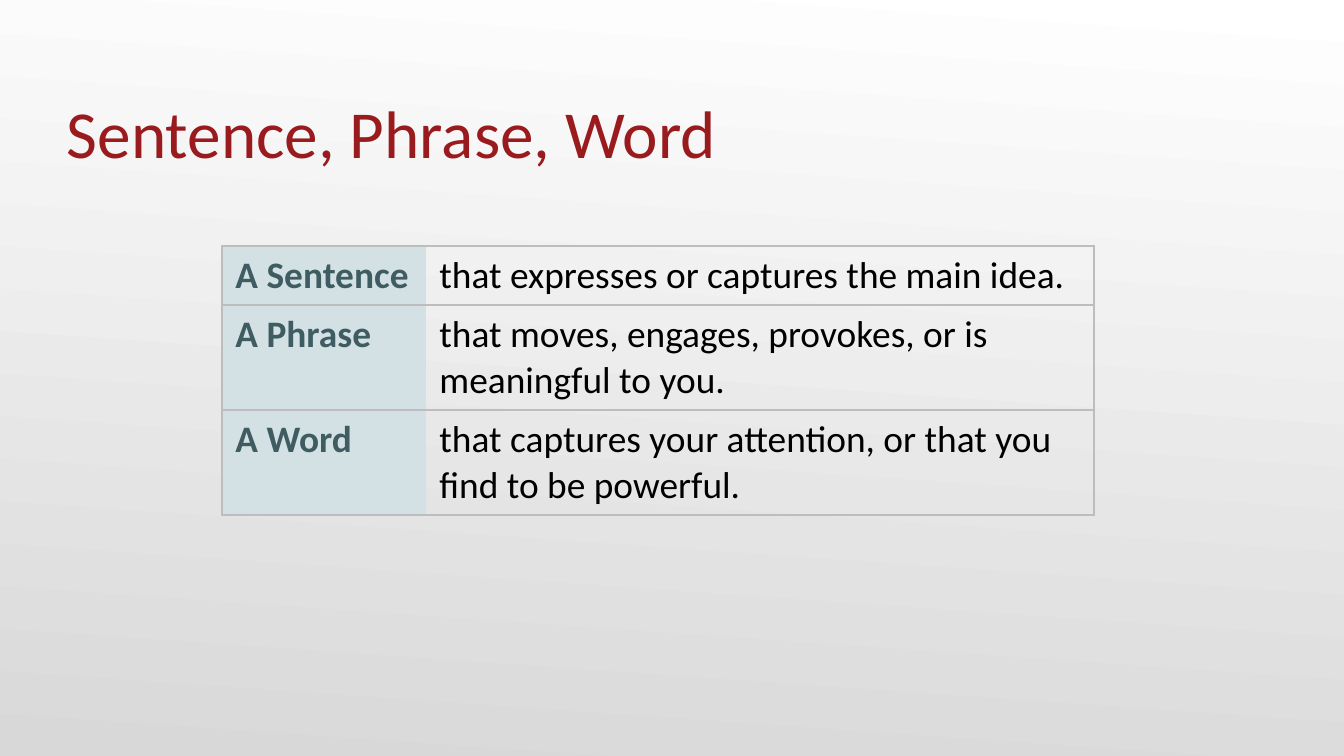
from lxml import etree
from pptx import Presentation
from pptx.dml.color import RGBColor
from pptx.enum.text import MSO_ANCHOR
from pptx.oxml.ns import qn
from pptx.util import Emu, Pt

BOTTOM = MSO_ANCHOR.BOTTOM
WHITE = RGBColor(0xFF, 0xFF, 0xFF)
GREY = RGBColor(0xD8, 0xD8, 0xD8)
RED = RGBColor(0x99, 0x1B, 0x1E)
TEAL = RGBColor(0x3E, 0x5C, 0x61)
PALE_TEAL = RGBColor(0xD4, 0xE1, 0xE4)
BLACK = RGBColor(0, 0, 0)
RULE_GREY = RGBColor(0xBD, 0xBD, 0xBD)
NO_STYLE = "{2D5ABB26-0587-4C30-8999-92F81FD0307C}"


def px(length):
    return Emu(round(length * 914400 / 134.4))


def add_borders(cell, sides):
    properties = cell._tc.get_or_add_tcPr()
    for position, side in enumerate(sides):
        line = etree.Element(qn(f"a:ln{side}"), w=str(Pt(0.75)))
        fill = etree.SubElement(line, qn("a:solidFill"))
        etree.SubElement(fill, qn("a:srgbClr"), val=str(RULE_GREY))
        properties.insert(position, line)


prs = Presentation()
prs.slide_width = px(1344)
prs.slide_height = px(756)
slide = prs.slides.add_slide(prs.slide_layouts[6])

backdrop = slide.background.fill
backdrop.gradient()
backdrop.gradient_angle = 266
for stop, color in zip(backdrop.gradient_stops, (WHITE, GREY)):
    stop.color.rgb = color

title = slide.shapes.add_textbox(px(67), px(46), px(1210), px(126)).text_frame
title.word_wrap = True
title.vertical_anchor = BOTTOM
title.margin_left = title.margin_right = title.margin_bottom = 0
title.text = "Sentence, Phrase, Word"
title_font = title.paragraphs[0].runs[0].font
title_font.name = "Calibri"
title_font.size = Pt(36)
title_font.color.rgb = RED

choices = [
    ("A Sentence", "that expresses or captures the main idea."),
    ("A Phrase", "that moves, engages, provokes, or is meaningful to you."),
    ("A Word", "that captures your attention, or that you find to be powerful."),
]
column_widths = (204, 668)
row_heights = (59, 105, 105)
column_styles = ((TEAL, True, "LTB"), (BLACK, False, "RTB"))

choice_table = slide.shapes.add_table(
    len(choices), 2, px(222), px(246), px(sum(column_widths)), px(sum(row_heights))
).table
choice_table.first_row = False
choice_table.horz_banding = False
choice_table._tbl.tblPr.find(qn("a:tableStyleId")).text = NO_STYLE
for column, width in zip(choice_table.columns, column_widths):
    column.width = px(width)

for row, height, texts in zip(choice_table.rows, row_heights, choices):
    row.height = px(height)
    for cell, text, (color, bold, sides) in zip(row.cells, texts, column_styles):
        cell.text = text
        font = cell.text_frame.paragraphs[0].runs[0].font
        font.name = "Calibri"
        font.size = Pt(20)
        font.bold = bold
        font.color.rgb = color
        cell.fill.background()
        add_borders(cell, sides)
    label_fill = row.cells[0].fill
    label_fill.solid()
    label_fill.fore_color.rgb = PALE_TEAL

prs.save("out.pptx")
